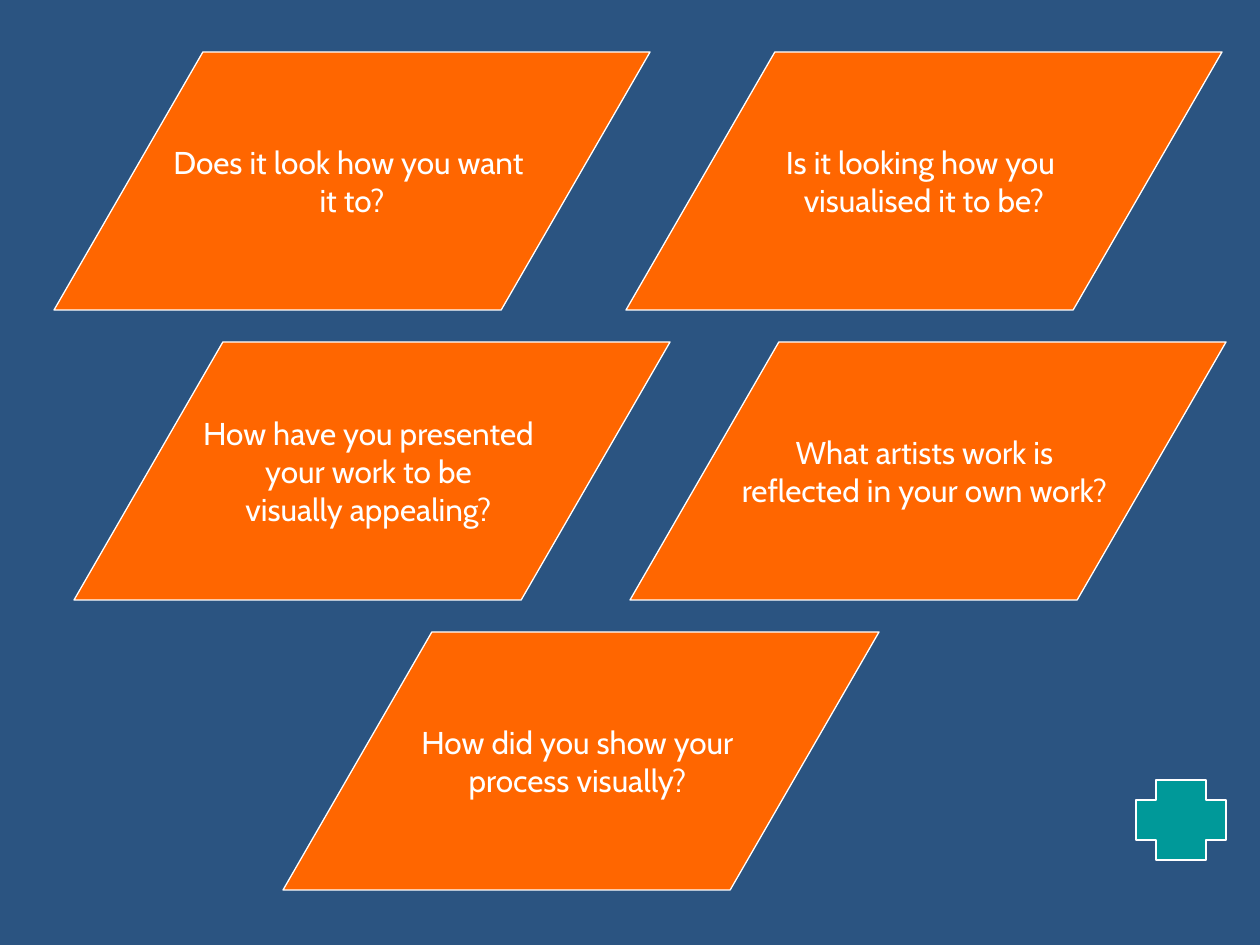
from dataclasses import dataclass

from pptx import Presentation
from pptx.dml.color import RGBColor
from pptx.enum.shapes import MSO_SHAPE
from pptx.enum.text import MSO_ANCHOR, PP_ALIGN
from pptx.util import Emu, Pt

SLANT = MSO_SHAPE.PARALLELOGRAM
CROSS = MSO_SHAPE.CROSS
MIDDLE = MSO_ANCHOR.MIDDLE
CENTER = PP_ALIGN.CENTER
BLANK = 6


@dataclass(frozen=True)
class Theme:
    back: RGBColor = RGBColor(0x2B, 0x54, 0x81)
    card: RGBColor = RGBColor(0xFF, 0x66, 0x00)
    plus: RGBColor = RGBColor(0x00, 0x99, 0x99)
    light: RGBColor = RGBColor(0xFF, 0xFF, 0xFF)
    font: str = "Cabin"
    size: Pt = Pt(18)
    line: Pt = Pt(0.75)


THEME = Theme()

# Card grid, in px: the rows are evenly spaced, the lefts are staggered
WIDTH, HEIGHT = 596, 258
TOP, STEP = 52, 290

# Each row holds (left, lines); the space ending a line counts in its centring
ROWS = [
    [(54, ["Does it look how you want ", "it to?"]),
     (626, ["Is it looking how you ", "visualised it to be?"])],
    [(74, ["How have you presented ", "your work to be ",
           "visually appealing? "]),
     (630, ["What artists work is ", "reflected in your own work? "])],
    [(283, ["How did you show your ", "process visually? "])],
]


def px(count):
    return Emu(round(count * 914400 / 126))


def add_form(slide, kind, box, bend, color):
    """Add an outlined preset shape."""
    form = slide.shapes.add_shape(kind, *map(px, box))
    form.adjustments[0] = bend
    form.shadow.inherit = False
    form.fill.solid()
    form.fill.fore_color.rgb = color
    form.line.color.rgb = THEME.light
    form.line.width = THEME.line
    return form


def add_card(slide, left, top, lines):
    """Add a slanted card with one paragraph per line."""
    card = add_form(slide, SLANT, (left, top, WIDTH, HEIGHT), 0.577, THEME.card)
    frame = card.text_frame
    frame.word_wrap = False
    frame.vertical_anchor = MIDDLE
    frame.text = "\n".join(lines)
    for para in frame.paragraphs:
        para.alignment = CENTER
        para.font.name = THEME.font
        para.font.size = THEME.size
        para.font.color.rgb = THEME.light


def main():
    deck = Presentation()
    deck.slide_width, deck.slide_height = px(1260), px(945)
    slide = deck.slides.add_slide(deck.slide_layouts[BLANK])
    slide.background.fill.solid()
    slide.background.fill.fore_color.rgb = THEME.back

    # Question cards
    for row, cards in enumerate(ROWS):
        for left, lines in cards:
            add_card(slide, left, TOP + row * STEP, lines)

    # Corner cross
    add_form(slide, CROSS, (1136, 780, 90, 80), 0.25, THEME.plus)
    deck.save("out.pptx")


if __name__ == "__main__":
    main()
